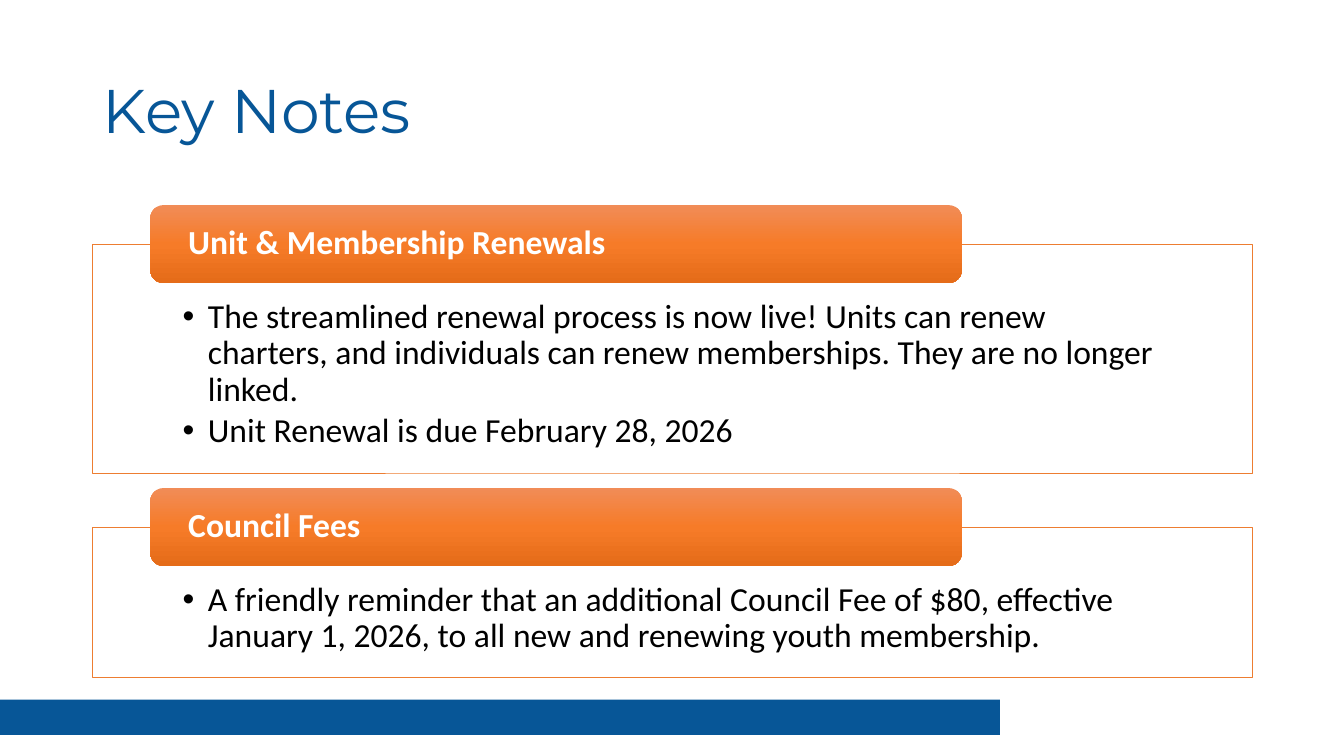
import copy

import pptx
import pptx.dml.color
import pptx.enum.dml
import pptx.enum.shapes
import pptx.enum.text
import pptx.oxml
import pptx.oxml.ns
import pptx.util

Cm = pptx.util.Cm
Pt = pptx.util.Pt
Color = pptx.dml.color.RGBColor.from_string
Align = pptx.enum.text.PP_ALIGN
Anchor = pptx.enum.text.MSO_ANCHOR
Preset = pptx.enum.shapes.MSO_SHAPE

TITLE = "Key Notes"
SECTIONS = [
    {
        "heading": "Unit & Membership Renewals",
        "notes": [
            "The streamlined renewal process is now live! Units can renew charters, "
            "and individuals can renew memberships. They are no longer linked.",
            "Unit Renewal is due February 28, 2026",
        ],
        "height": 5.77,
    },
    {
        "heading": "Council Fees",
        "notes": [
            "A friendly reminder that an additional Council Fee of $80, effective "
            "January 1, 2026, to all new and renewing youth membership.",
        ],
        "height": 3.78,
    },
]

THEME = {
    "blue": Color("075697"),
    "outline": Color("ED7D31"),
    "white": Color("FFFFFF"),
    "tab_stops": [(0, "F18C57"), (0.5, "F67B28"), (1, "E56C19")],
    "title_font": {"name": "Montserrat", "size": Pt(44), "bold": False},
    "heading_font": {"name": "Calibri", "size": Pt(24), "bold": True},
    "note_font": {"name": "Calibri", "size": Pt(24), "bold": False},
    "black": Color("000000"),
}

LEFT, WIDTH = 2.34, 29.21
FIRST_TAB_TOP, SECTION_GAP = 5.17, 0.38
TAB_LEFT, TAB_WIDTH, TAB_HEIGHT = 3.79, 20.45, 1.96
BULLET_INDENT = 0.64


def set_all(target, values):
    for name, value in values.items():
        setattr(target, name, value)


def place(shape, left, top, width, height):
    set_all(shape, {"left": Cm(left), "top": Cm(top), "width": Cm(width), "height": Cm(height)})


def set_frame(box, anchor, left, top, right, bottom):
    set_all(box.text_frame, {
        "word_wrap": True,
        "auto_size": pptx.enum.text.MSO_AUTO_SIZE.NONE,
        "vertical_anchor": anchor,
        "margin_left": Cm(left),
        "margin_top": Cm(top),
        "margin_right": Cm(right),
        "margin_bottom": Cm(bottom),
    })


def write(box, lines, font, color, space_after=0, bulleted=False):
    for index, line in enumerate(lines):
        frame = box.text_frame
        para = frame.add_paragraph() if index else frame.paragraphs[0]
        para.text = line
        set_all(para, {
            "alignment": Align.LEFT,
            "line_spacing": 0.9,
            "space_before": Pt(0),
            "space_after": Pt(space_after),
        })
        if bulleted:
            add_bullet(para)
        set_all(para.runs[0].font, font)
        para.runs[0].font.color.rgb = color


def add_bullet(para):
    properties = para._p.get_or_add_pPr()
    properties.set("marL", str(Cm(BULLET_INDENT)))
    properties.set("indent", str(-Cm(BULLET_INDENT)))
    for tag, key, value in (("a:buFont", "typeface", "Arial"), ("a:buChar", "char", "•")):
        bullet = pptx.oxml.parse_xml(f"<{tag} {pptx.oxml.ns.nsdecls('a')}/>")
        bullet.set(key, value)
        properties.append(bullet)


def add_block(page, preset, left, top, width, height):
    block = page.shapes.add_shape(preset, Cm(left), Cm(top), Cm(width), Cm(height))
    block.shadow.inherit = False
    block.line.fill.background()
    return block


def fill_gradient(block):
    block.fill.gradient()
    block.fill.gradient_angle = 270
    stop_list = block._element.spPr.find(".//" + pptx.oxml.ns.qn("a:gsLst"))
    stop_list.insert(1, copy.deepcopy(stop_list[0]))
    for stop, (position, color) in zip(block.fill.gradient_stops, THEME["tab_stops"]):
        stop.position = position
        stop.color.rgb = Color(color)


def add_section(page, panel, section, tab_top):
    place(panel, LEFT, tab_top + TAB_HEIGHT / 2, WIDTH, section["height"])
    panel.fill.solid()
    panel.fill.fore_color.rgb = THEME["white"]
    set_all(panel.line, {"width": Pt(0.5)})
    panel.line.color.rgb = THEME["outline"]
    set_frame(panel, Anchor.TOP, 2.26, 1.4, 2.26, 0.48)
    write(panel, section["notes"], THEME["note_font"], THEME["black"], 3.6, True)

    tab = add_block(page, Preset.ROUNDED_RECTANGLE, TAB_LEFT, tab_top, TAB_WIDTH, TAB_HEIGHT)
    fill_gradient(tab)
    set_frame(tab, Anchor.MIDDLE, 0.86, 0, 0.86, 0)
    write(tab, [section["heading"]], THEME["heading_font"], THEME["white"])


def main():
    deck = pptx.Presentation()
    set_all(deck, {"slide_width": Cm(33.87), "slide_height": Cm(19.05)})
    page = deck.slides.add_slide(deck.slide_layouts.get_by_name("Two Content"))

    title = page.shapes.title
    place(title, LEFT, 1.01, WIDTH, 3.68)
    set_frame(title, Anchor.MIDDLE, 0.25, 0.13, 0.25, 0.13)
    write(title, [TITLE], THEME["title_font"], THEME["blue"])

    bar = add_block(page, Preset.RECTANGLE, 0, 17.63, 25.2, 0.89)
    bar.fill.solid()
    bar.fill.fore_color.rgb = THEME["blue"]

    tab_top = FIRST_TAB_TOP
    panels = [box for box in page.placeholders if box.placeholder_format.idx]
    for panel, section in zip(panels, SECTIONS):
        add_section(page, panel, section, tab_top)
        tab_top += TAB_HEIGHT / 2 + section["height"] + SECTION_GAP

    deck.save("out.pptx")


if __name__ == "__main__":
    main()
